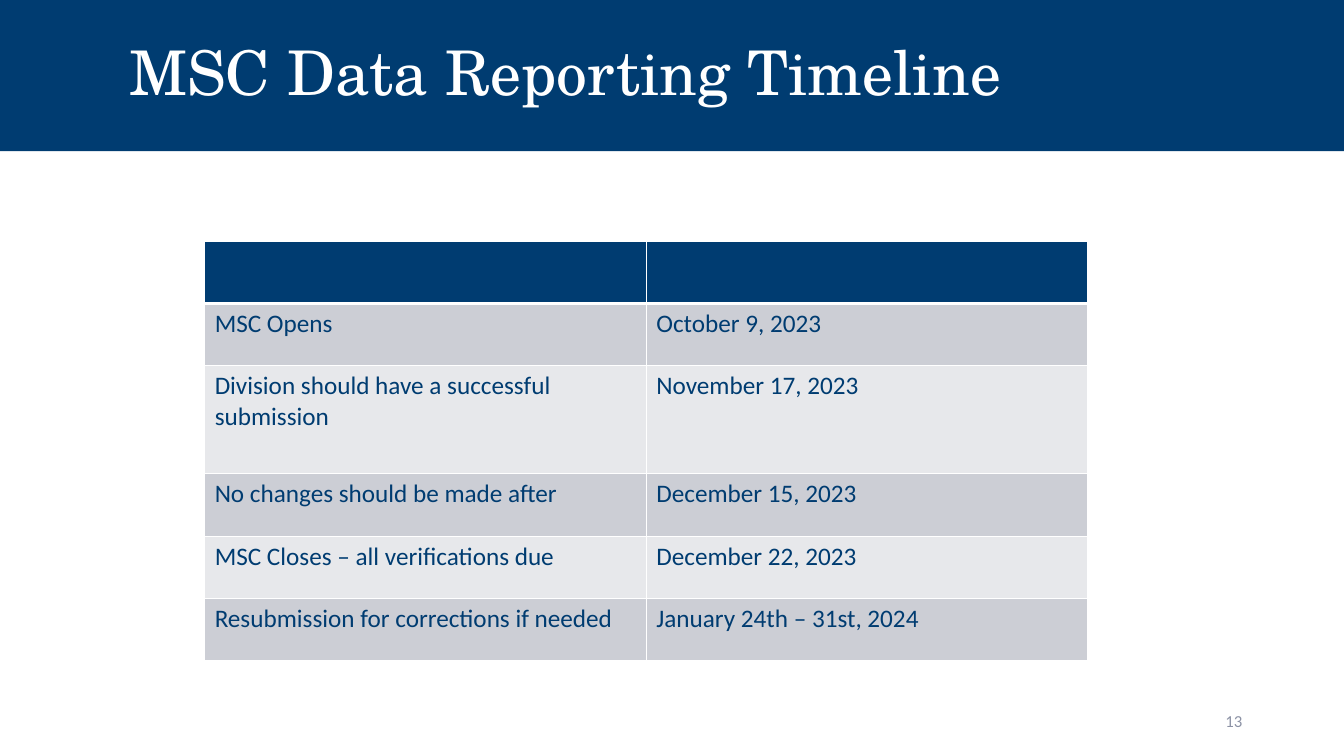
from dataclasses import dataclass

from lxml.etree import SubElement
from pptx import Presentation
from pptx.dml.color import RGBColor
from pptx.enum.shapes import MSO_SHAPE as Shape
from pptx.enum.text import MSO_ANCHOR as Anchor, PP_ALIGN as Align
from pptx.oxml.ns import qn
from pptx.util import Emu, Pt

PX = 9144


@dataclass(frozen=True)
class Theme:
    navy: str = "003C71"
    white: str = "FFFFFF"
    gray: str = "8C92A5"
    bands: tuple = ("CCCED5", "E7E8EB")
    heading_font: str = "TeX Gyre Schola"
    body_font: str = "Calibri"
    heading_size: int = 44
    body_size: int = 18
    number_size: int = 12
    thin: int = 1
    thick: int = 3


class SlideBuilder:
    def __init__(self, page, theme):
        self.page = page
        self.theme = theme

    def box(self, *lengths):
        return [Emu(length * PX) for length in lengths]

    def set_text(self, frame, text, font, size, color, align=Align.LEFT):
        frame.text = text
        frame.word_wrap = True
        para = frame.paragraphs[0]
        para.alignment = align
        for span in para.runs:
            span.font.name = font
            span.font.size = Pt(size)
            span.font.color.rgb = RGBColor.from_string(color)
        return para

    def set_fill(self, target, color):
        target.fill.solid()
        target.fill.fore_color.rgb = RGBColor.from_string(color)

    def title_band(self, text, left, top, width, height, indent):
        theme = self.theme
        band = self.page.shapes.add_shape(Shape.RECTANGLE, *self.box(left, top, width, height))
        band.shadow.inherit = False
        band.line.fill.background()
        self.set_fill(band, theme.navy)
        frame = band.text_frame
        frame.vertical_anchor = Anchor.MIDDLE
        frame.margin_left = Emu(indent * PX)
        para = self.set_text(frame, text, theme.heading_font, theme.heading_size, theme.white)
        para.line_spacing = 0.9

    def page_number(self, text, left, top, width, height):
        theme = self.theme
        label = self.page.shapes.add_textbox(*self.box(left, top, width, height))
        label.text_frame.vertical_anchor = Anchor.MIDDLE
        self.set_text(label.text_frame, text, theme.body_font, theme.number_size, theme.gray, Align.RIGHT)

    def cell_borders(self, cell, top, bottom):
        properties = cell._tc.get_or_add_tcPr()
        widths = {"lnL": self.theme.thin, "lnR": self.theme.thin, "lnT": top, "lnB": bottom}
        for position, (side, width) in enumerate(widths.items()):
            line = SubElement(properties, qn(f"a:{side}"), w=str(Pt(width)))
            solid = SubElement(line, qn("a:solidFill"))
            SubElement(solid, qn("a:srgbClr"), val=self.theme.white)
            properties.insert(position, line)

    def timeline_table(self, rows, left, top, column_width, heights):
        theme = self.theme
        columns = len(rows[0])
        lengths = self.box(left, top, column_width * columns, sum(heights))
        table = self.page.shapes.add_table(len(rows), columns, *lengths).table
        for column in table.columns:
            column.width = Emu(column_width * PX)
        for index, (texts, height) in enumerate(zip(rows, heights)):
            table.rows[index].height = Emu(height * PX)
            color = theme.bands[(index - 1) % 2] if index else theme.navy
            upper = theme.thick if index == 1 else theme.thin
            lower = theme.thick if index == 0 else theme.thin
            for cell, text in zip(table.rows[index].cells, texts):
                self.set_fill(cell, color)
                self.cell_borders(cell, upper, lower)
                if text:
                    self.set_text(cell.text_frame, text, theme.body_font, theme.body_size, theme.navy)


def main():
    deck = Presentation()
    deck.slide_width = Emu(1333 * PX)
    deck.slide_height = Emu(750 * PX)
    slide = SlideBuilder(deck.slides.add_slide(deck.slide_layouts[6]), Theme())
    slide.page_number("13", 942, 695, 300, 40)
    slide.title_band("MSC Data Reporting Timeline", 0, 0, 1333, 150, indent=128)
    milestones = [
        ("", ""),
        ("MSC Opens", "October 9, 2023"),
        ("Division should have a successful submission", "November 17, 2023"),
        ("No changes should be made after", "December 15, 2023"),
        ("MSC Closes – all verifications due", "December 22, 2023"),
        ("Resubmission for corrections if needed", "January 24th – 31st, 2024"),
    ]
    slide.timeline_table(milestones, 203, 239, 438, [62, 62, 107, 62, 62, 62])
    deck.save("out.pptx")


if __name__ == "__main__":
    main()
